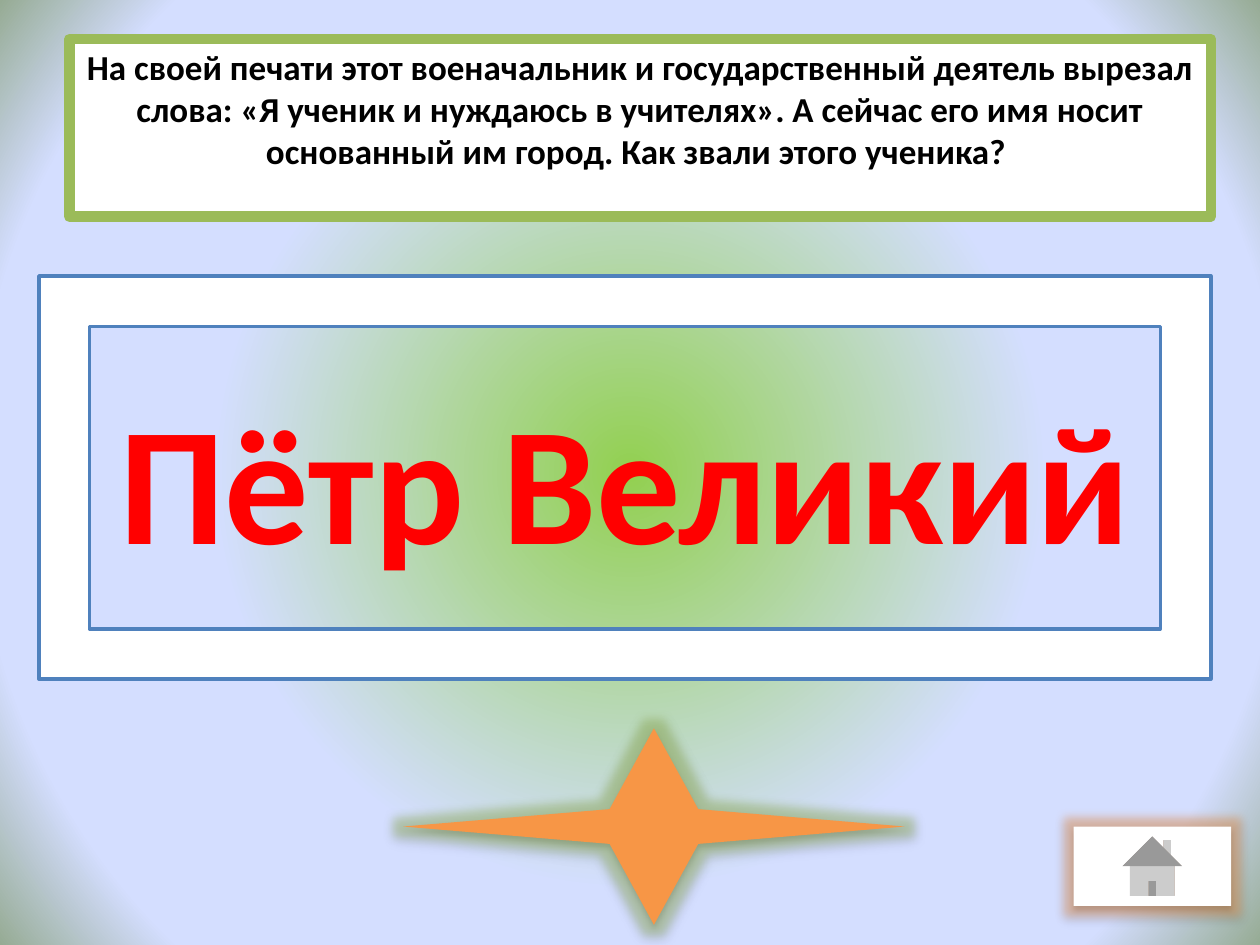
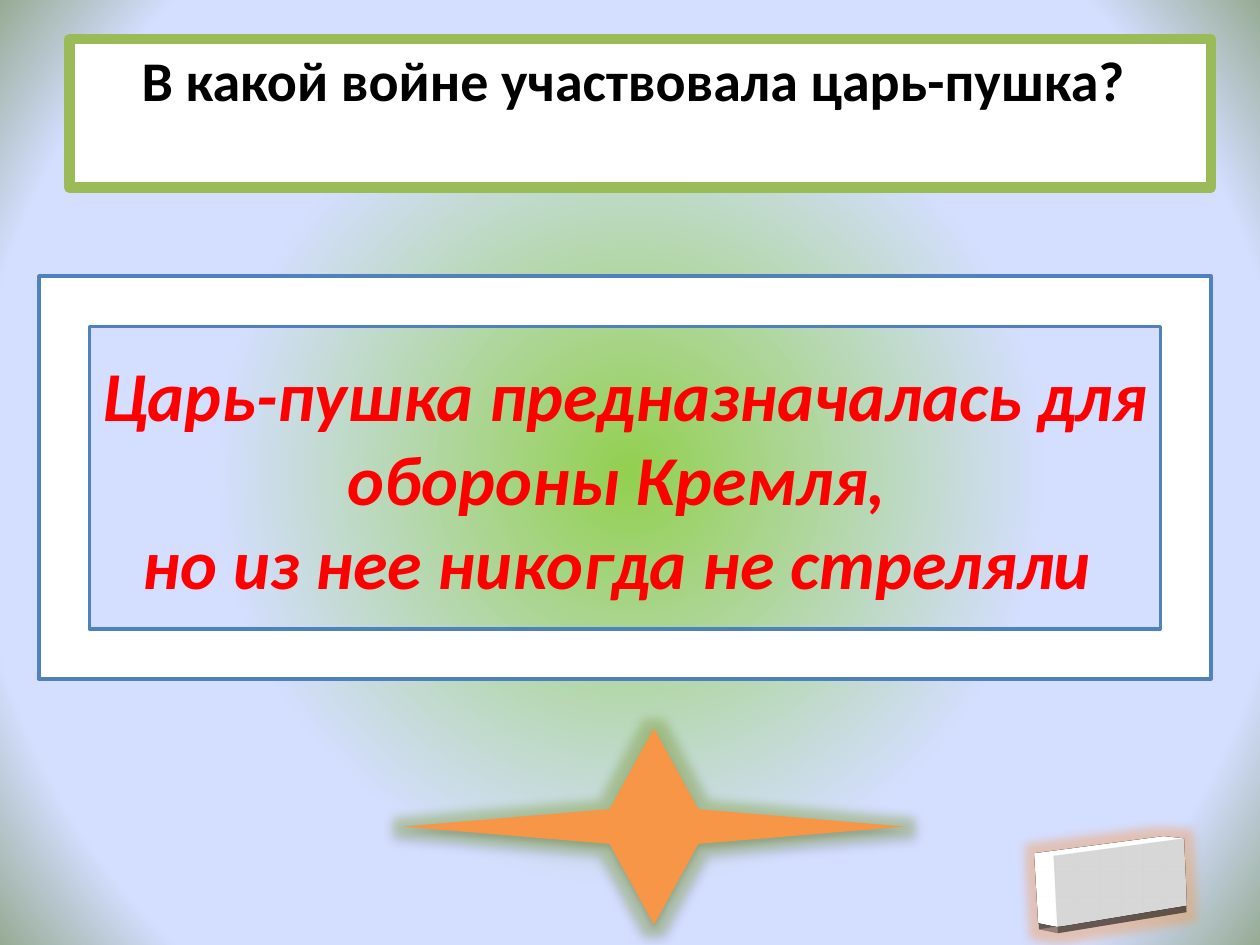
from lxml import etree
from pptx import Presentation
from pptx.dml.color import RGBColor
from pptx.enum.shapes import MSO_SHAPE
from pptx.enum.text import MSO_ANCHOR, MSO_AUTO_SIZE, PP_ALIGN
from pptx.util import Inches, Pt

STAR, FRAME = MSO_SHAPE.STAR_4_POINT, MSO_SHAPE.FRAME
HOME, END = MSO_SHAPE.ACTION_BUTTON_HOME, MSO_SHAPE.ACTION_BUTTON_END
TOP, MIDDLE, CENTER = MSO_ANCHOR.TOP, MSO_ANCHOR.MIDDLE, PP_ALIGN.CENTER
NO_AUTOFIT = MSO_AUTO_SIZE.NONE

WHITE = RGBColor(0xFF, 0xFF, 0xFF)
BLACK = RGBColor(0, 0, 0)
RED = RGBColor(0xFF, 0, 0)
GREEN = RGBColor(0x9B, 0xBB, 0x59)
ORANGE = RGBColor(0xF7, 0x96, 0x46)
BLUE = RGBColor(0x4F, 0x81, 0xBD)
BRIGHT_GREEN = RGBColor(0x92, 0xD0, 0x50)
LAVENDER = RGBColor(0xD4, 0xDE, 0xFF)
GREY_GREEN = RGBColor(0x96, 0xAB, 0x94)

# Background stops: position %, colour, opacity %
STOPS = [(0, BRIGHT_GREEN, 67), (53, LAVENDER, 100),
         (83, LAVENDER, 100), (100, GREY_GREEN, 100)]
FONT = "Calibri"
A = 'xmlns:a="http://schemas.openxmlformats.org/drawingml/2006/main"'

# Shadows: blur pt, distance pt, direction in degrees, opacity %
SOFT_SHADOW = (3.5, 2.2, 90, 32)
WIDE_SHADOW = (17.8, 4, 87, 33)
GLOW_RADIUS = 11

# Boxes in percent of the slide: left, top, width, height
STAR_BOX = (32, 77.07, 39.8, 20.8)
ANSWER_BOX = (3.1, 29.2, 93, 42.67)
HOME_BOX = (85.2, 87.47, 12.5, 8.4)
END_BOX = (82.8, 89.6, 12.5, 7.33)

DEPTH = [
    f'''<a:scene3d {A}>
      <a:camera prst="perspectiveFront" fov="3300000">
        <a:rot lat="486000" lon="19530000" rev="174000"/></a:camera>
      <a:lightRig rig="harsh" dir="t"><a:rot lat="0" lon="0" rev="3000000"/></a:lightRig>
    </a:scene3d>''',
    f'''<a:sp3d {A} extrusionH="254000" contourW="19050">
      <a:bevelT w="82550" h="44450" prst="angle"/>
      <a:bevelB w="82550" h="44450" prst="angle"/>
      <a:contourClr><a:srgbClr val="FFFFFF"/></a:contourClr>
    </a:sp3d>''',
]

prs = Presentation()
prs.slide_width, prs.slide_height = Inches(10), Inches(7.5)


def place(box):
    """Turn percentages of the slide into lengths."""
    sides = (prs.slide_width, prs.slide_height) * 2
    return [round(side * share / 100) for side, share in zip(sides, box)]


def color_xml(color, opacity):
    return (f'<a:srgbClr val="{color}"><a:alpha val="{opacity * 1000}"/>'
            '</a:srgbClr>')


def paint(sp, fill, line=None, width=0):
    sp.fill.solid()
    sp.fill.fore_color.rgb = fill
    if line is None:
        sp.line.fill.background()
    else:
        sp.line.color.rgb = line
        sp.line.width = Pt(width)


def add_shape(s, kind, box, fill, line=None, width=0):
    sp = s.shapes.add_shape(kind, *place(box))
    sp.shadow.inherit = False
    paint(sp, fill, line, width)
    return sp


def write(sp, lines, anchor, **font):
    tf = sp.text_frame
    tf.word_wrap = True
    tf.auto_size = NO_AUTOFIT
    tf.vertical_anchor = anchor
    for i, line in enumerate(lines):
        p = tf.add_paragraph() if i else tf.paragraphs[0]
        p.alignment = CENTER
        r = p.add_run()
        r.text = line
        for name, value in font.items():
            setattr(r.font, name, value)
        r.font.name = FONT
        r.font.bold = True


def add_effects(sp, glow, shadow):
    blur, distance, angle, opacity = shadow
    effects = sp.element.spPr.find("{*}effectLst")
    for xml in (
        f'<a:glow {A} rad="{Pt(GLOW_RADIUS)}">{color_xml(glow, 40)}</a:glow>',
        f'<a:outerShdw {A} blurRad="{Pt(blur)}" dist="{Pt(distance)}" '
        f'dir="{angle * 60000}" algn="ctr" rotWithShape="0">'
        f'{color_xml(BLACK, opacity)}</a:outerShdw>',
    ):
        effects.append(etree.fromstring(xml))


def set_background(master):
    master.background.fill.solid()
    bg = master.element.xpath(".//p:bgPr")[0]
    stops = "".join(f'<a:gs pos="{pos * 1000}">{color_xml(color, opacity)}</a:gs>'
                    for pos, color, opacity in STOPS)
    bg.replace(bg[0], etree.fromstring(
        f'<a:gradFill {A} rotWithShape="1"><a:gsLst>{stops}</a:gsLst>'
        '<a:path path="circle"><a:fillToRect l="50000" t="50000" r="50000" '
        'b="50000"/></a:path></a:gradFill>'))


def add_question(s, text, height, size):
    title = s.shapes.title
    title.left, title.top, title.width, title.height = place((5.5, 4.13, 90.6, height))
    paint(title, WHITE, GREEN, 6)
    write(title, [text], TOP, size=Pt(size))
    title.text_frame.paragraphs[0].font.color.rgb = BLACK


def add_answer(s, lines, size, italic):
    sp = add_shape(s, FRAME, ANSWER_BOX, WHITE, BLUE, 2)
    write(sp, lines, MIDDLE, size=Pt(size), italic=italic)
    for p in sp.text_frame.paragraphs:
        for r in p.runs:
            r.font.color.rgb = RED


def add_button(s, kind, box, shadow, depth=()):
    sp = add_shape(s, kind, box, WHITE)
    add_effects(sp, ORANGE, shadow)
    for xml in depth:
        sp.element.spPr.append(etree.fromstring(xml))


def add_quiz_slide(question, answer, button):
    s = prs.slides.add_slide(prs.slide_layouts[5])
    add_question(s, **question)
    star = add_shape(s, STAR, STAR_BOX, ORANGE)
    add_effects(star, GREEN, SOFT_SHADOW)
    add_answer(s, **answer)
    add_button(s, **button)


set_background(prs.slide_master)

# Peter the Great
add_quiz_slide(
    dict(text="На своей печати этот военачальник и государственный деятель "
              "вырезал слова: «Я ученик и нуждаюсь в учителях». А сейчас его "
              "имя носит основанный им город. Как звали этого ученика? ",
         height=18.8, size=20),
    dict(lines=["Пётр Великий"], size=96, italic=False),
    dict(kind=HOME, box=HOME_BOX, shadow=SOFT_SHADOW))

# Tsar Cannon
add_quiz_slide(
    dict(text="В какой войне участвовала царь-пушка? ", height=15.73, size=32),
    dict(lines=["Царь-пушка предназначалась для обороны Кремля, ",
                "но из нее никогда не стреляли "], size=40, italic=True),
    dict(kind=END, box=END_BOX, shadow=WIDE_SHADOW, depth=DEPTH))

prs.save("out.pptx")
